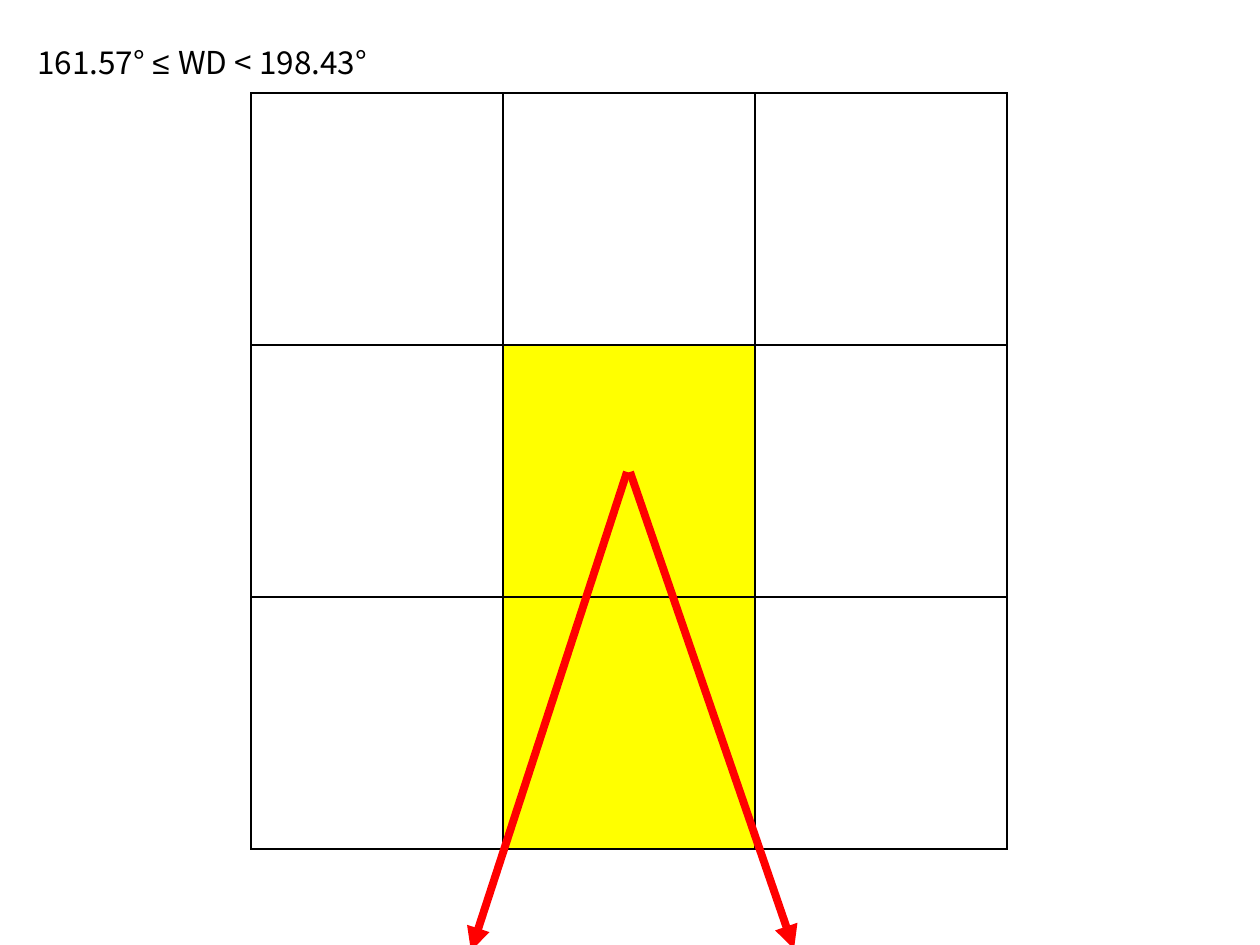
from lxml.etree import SubElement
from pptx import Presentation
from pptx.dml.color import RGBColor
from pptx.enum.shapes import MSO_CONNECTOR as Connector
from pptx.enum.text import MSO_AUTO_SIZE as AutoSize
from pptx.oxml.ns import qn
from pptx.util import Emu, Pt

SCALE = 914400 / 126
SANS = "Noto Sans CJK KR"
YELLOW_CELLS = {(1, 1), (2, 1)}


def px(length):
    """Turn pixels into EMU."""
    return Emu(round(length * SCALE))


def color(value):
    """Turn a hex string into a colour."""
    return RGBColor.from_string(value)


def add_text(para, text, font=SANS, size=18, fill="000000"):
    """Add a formatted span of text to a paragraph."""
    span = para.add_run()
    span.text = text
    span.font.name = font
    span.font.size = Pt(size)
    span.font.color.rgb = color(fill)


def add_border(cell, width=1, fill="000000"):
    """Draw a solid line on all four sides of a cell."""
    properties = cell._tc.get_or_add_tcPr()
    for side in ("a:lnL", "a:lnR", "a:lnT", "a:lnB"):
        line = SubElement(properties, qn(side), w=str(Pt(width)))
        solid = SubElement(line, qn("a:solidFill"))
        SubElement(solid, qn("a:srgbClr"), val=fill)


def add_grid(page, left, top, size, count=3):
    """Place the square grid with its downwind cells in yellow."""
    frame = page.shapes.add_table(count, count, px(left), px(top), px(size), px(size))
    table = frame.table
    table.first_row = table.horz_banding = False
    for row in range(count):
        for column in range(count):
            cell = table.cell(row, column)
            add_border(cell)
            if (row, column) in YELLOW_CELLS:
                cell.fill.solid()
                cell.fill.fore_color.rgb = color("FFFF00")
            else:
                cell.fill.background()


def add_range_label(page, left, top, width, height):
    """Place the wind direction range."""
    box = page.shapes.add_textbox(px(left), px(top), px(width), px(height))
    box.text_frame.word_wrap = False
    box.text_frame.auto_size = AutoSize.SHAPE_TO_FIT_TEXT
    para = box.text_frame.paragraphs[0]
    add_text(para, "161.57° ")
    add_text(para, "≤ ", font="Arial")
    add_text(para, "WD < 198.43°")


def add_arrow(page, start, end, width=4.5, fill="FF0000"):
    """Draw a straight arrow between two points."""
    arrow = page.shapes.add_connector(Connector.STRAIGHT, *map(px, start + end))
    arrow.line.width = Pt(width)
    arrow.line.color.rgb = color(fill)
    SubElement(arrow.line._get_or_add_ln(), qn("a:tailEnd"), type="triangle")
    SubElement(arrow._element.spPr, qn("a:effectLst"))


def add_wind_sector(page, left, top):
    """Draw the two arrows that bound the wind sector."""
    add_arrow(page, (left, top), (left - 156, top + 479))
    add_arrow(page, (left + 3, top), (left + 167, top + 477))


def main():
    """Build and save the deck."""
    deck = Presentation()
    deck.slide_width, deck.slide_height = px(1260), px(945)
    page = deck.slides.add_slide(deck.slide_layouts[6])
    add_grid(page, 251, 93, 756)
    add_range_label(page, 25, 37, 374, 50)
    add_wind_sector(page, 627, 472)
    deck.save("out.pptx")


if __name__ == "__main__":
    main()
